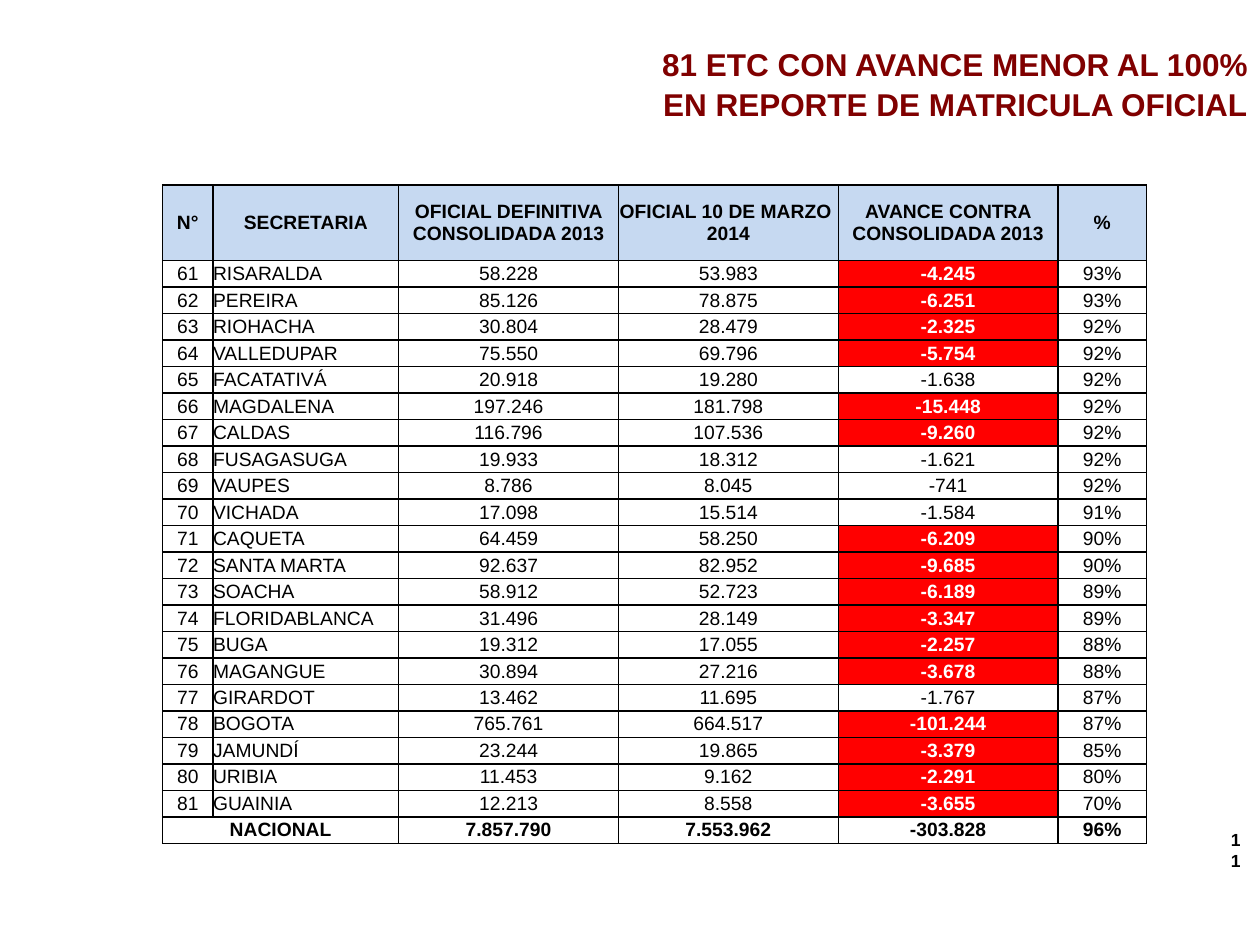
from dataclasses import dataclass

from lxml.etree import SubElement
from pptx import Presentation
from pptx.dml.color import RGBColor
from pptx.enum.text import MSO_ANCHOR, PP_ALIGN
from pptx.oxml.ns import qn
from pptx.util import Inches, Pt


@dataclass(frozen=True)
class Theme:
    font: str = "Arial"
    title: str = "800000"
    ink: str = "000000"
    light: str = "FFFFFF"
    header: str = "C6D9F1"
    alert: str = "FF0000"
    title_size: int = 18
    table_size: int = 11
    number_size: int = 10
    border: int = 1


THEME = Theme()
SLIDE_W, SLIDE_H = Inches(10), Inches(7.5)
ALERT_LIMIT = -2000  # shortfalls at or beyond this are highlighted

COLUMNS = [0.4, 1.47, 1.74, 1.74, 1.74, 0.7]  # relative widths
HEADER_ROWS = 2.85  # header height in body rows
HEADERS = ["N°", "SECRETARIA", "OFICIAL DEFINITIVA CONSOLIDADA 2013",
           "OFICIAL 10 DE MARZO  2014", "AVANCE CONTRA CONSOLIDADA 2013", "%"]
FIRST_NUMBER = 61
SECRETARIAS = [
    ("RISARALDA", 58228, 53983),
    ("PEREIRA", 85126, 78875),
    ("RIOHACHA", 30804, 28479),
    ("VALLEDUPAR", 75550, 69796),
    ("FACATATIVÁ", 20918, 19280),
    ("MAGDALENA", 197246, 181798),
    ("CALDAS", 116796, 107536),
    ("FUSAGASUGA", 19933, 18312),
    ("VAUPES", 8786, 8045),
    ("VICHADA", 17098, 15514),
    ("CAQUETA", 64459, 58250),
    ("SANTA MARTA", 92637, 82952),
    ("SOACHA", 58912, 52723),
    ("FLORIDABLANCA", 31496, 28149),
    ("BUGA", 19312, 17055),
    ("MAGANGUE", 30894, 27216),
    ("GIRARDOT", 13462, 11695),
    ("BOGOTA", 765761, 664517),
    ("JAMUNDÍ", 23244, 19865),
    ("URIBIA", 11453, 9162),
    ("GUAINIA", 12213, 8558),
]
NATIONAL = (7857790, 7553962)


def place(left, top, width, height):
    """Turn shares of the slide into a box."""
    return (int(left * SLIDE_W), int(top * SLIDE_H),
            int(width * SLIDE_W), int(height * SLIDE_H))


def write(p, text, size, color=THEME.ink, bold=False, align=PP_ALIGN.CENTER):
    p.alignment = align
    r = p.add_run()
    r.text = text
    for name, value in {"name": THEME.font, "size": Pt(size), "bold": bold}.items():
        setattr(r.font, name, value)
    r.font.color.rgb = RGBColor.from_string(color)


def add_title(s, box):
    tf = s.shapes.add_textbox(*box).text_frame
    tf.word_wrap = True
    tf.margin_left = tf.margin_right = Inches(0.09)
    lines = ["81 ETC CON AVANCE MENOR AL 100% ", "EN REPORTE DE MATRICULA OFICIAL "]
    for i, line in enumerate(lines):
        p = tf.add_paragraph() if i else tf.paragraphs[0]
        p.line_spacing = 1.05
        write(p, line, THEME.title_size, THEME.title, True)


def add_page_number(s, box):
    tf = s.shapes.add_textbox(*box).text_frame
    tf.word_wrap = True
    tf.vertical_anchor = MSO_ANCHOR.MIDDLE
    write(tf.paragraphs[0], "11 ", THEME.number_size, bold=True, align=PP_ALIGN.RIGHT)


def figures(definitive, march):
    """Both enrolments, their difference and the share reached."""
    counts = [f"{n:,}".replace(",", ".") for n in (definitive, march, march - definitive)]
    return counts + [f"{march / definitive:.0%}"]


def fill_cell(cell, text, fill=None, **style):
    layout = {"vertical_anchor": MSO_ANCHOR.MIDDLE, "margin_left": 0,
              "margin_right": 0, "margin_top": 0, "margin_bottom": 0}
    for name, value in layout.items():
        setattr(cell, name, value)
    # Borders come before the fill in the cell properties
    tc_pr = cell._tc.get_or_add_tcPr()
    for side in ("a:lnL", "a:lnR", "a:lnT", "a:lnB"):
        ln = SubElement(tc_pr, qn(side), w=str(Pt(THEME.border)))
        SubElement(SubElement(ln, qn("a:solidFill")), qn("a:srgbClr"), val=THEME.ink)
    if fill:
        cell.fill.solid()
        cell.fill.fore_color.rgb = RGBColor.from_string(fill)
    else:
        cell.fill.background()
    if text:
        write(cell.text_frame.paragraphs[0], text, THEME.table_size, **style)


def add_enrolment_table(s, box):
    width, height = box[2:]
    n_rows = len(SECRETARIAS) + 2
    table = s.shapes.add_table(n_rows, len(COLUMNS), *box).table
    table.first_row = table.horz_banding = False

    # Grid
    for col, share in zip(table.columns, COLUMNS):
        col.width = int(width * share / sum(COLUMNS))
    unit = height / (n_rows - 1 + HEADER_ROWS)
    for i, row in enumerate(table.rows):
        row.height = int(unit * (1 if i else HEADER_ROWS))

    # Header
    for c, text in enumerate(HEADERS):
        fill_cell(table.cell(0, c), text, THEME.header, bold=True)

    # One row for each secretaria
    for i, (name, definitive, march) in enumerate(SECRETARIAS):
        texts = [str(FIRST_NUMBER + i), name] + figures(definitive, march)
        for c, text in enumerate(texts):
            style = {}
            if c == 1:
                style = {"align": PP_ALIGN.LEFT}
            elif c == 4 and march - definitive <= ALERT_LIMIT:
                style = {"fill": THEME.alert, "color": THEME.light, "bold": True}
            fill_cell(table.cell(i + 1, c), text, **style)

    # National total
    last = n_rows - 1
    table.cell(last, 0).merge(table.cell(last, 1))
    for c, text in enumerate(["NACIONAL", ""] + figures(*NATIONAL)):
        fill_cell(table.cell(last, c), text, bold=True)


def main():
    prs = Presentation()
    prs.slide_width, prs.slide_height = SLIDE_W, SLIDE_H
    s = prs.slides.add_slide(prs.slide_layouts[6])
    add_page_number(s, place(0.967, 0.899, 0.022, 0.023))
    add_enrolment_table(s, place(0.129, 0.196, 0.781, 0.697))
    add_title(s, place(0.516, 0.039, 0.484, 0.135))
    prs.save("out.pptx")


if __name__ == "__main__":
    main()
